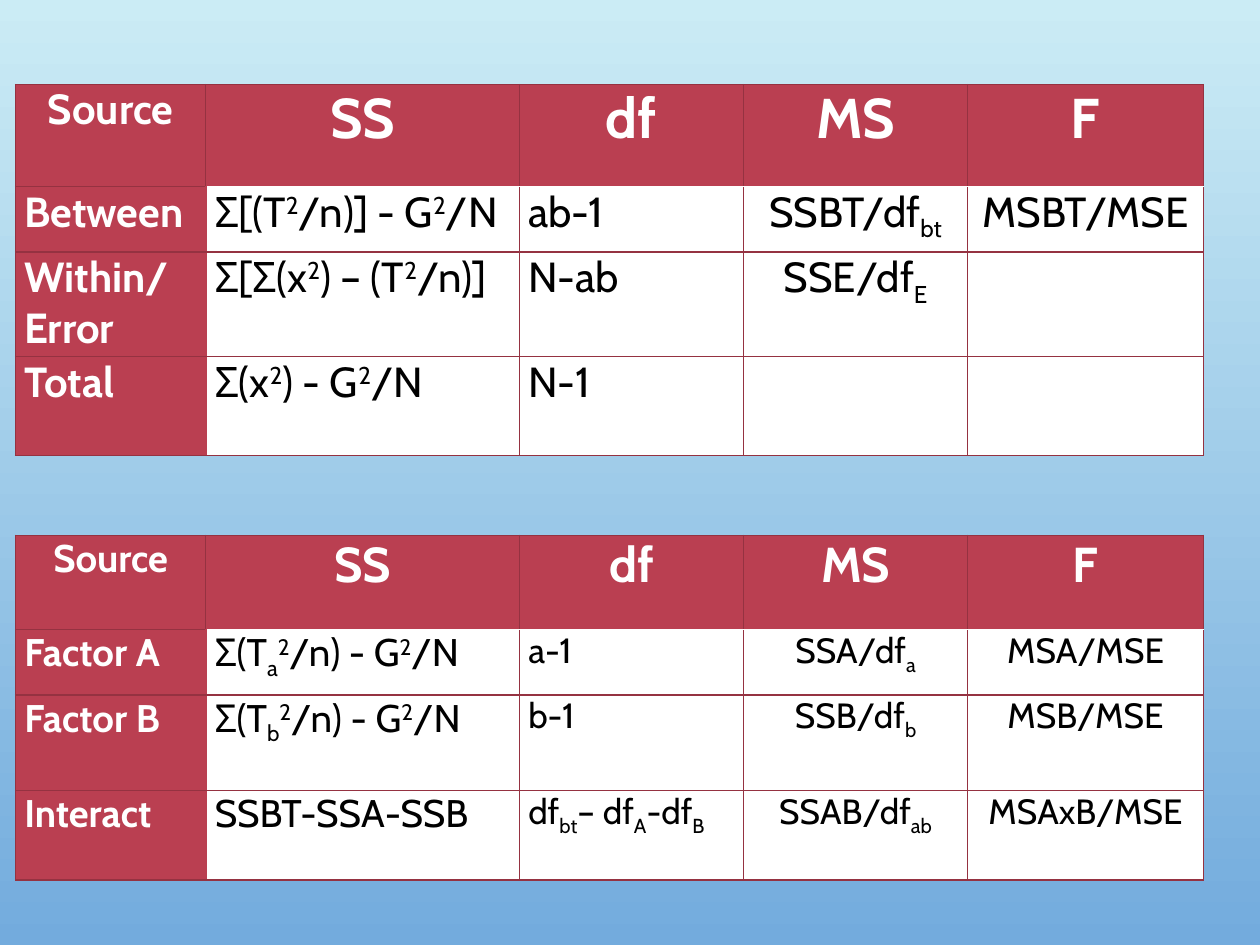
from lxml import etree
from pptx import Presentation
from pptx.dml.color import RGBColor
from pptx.enum.text import PP_ALIGN
from pptx.oxml.ns import qn
from pptx.util import Cm, Pt

CENTER, LEFT = PP_ALIGN.CENTER, PP_ALIGN.LEFT
WHITE = RGBColor(0xFF, 0xFF, 0xFF)
BLACK = RGBColor(0x00, 0x00, 0x00)
RED = RGBColor(0xBA, 0x3F, 0x51)
DARK_RED = RGBColor(0x95, 0x32, 0x41)
SKY_TOP = RGBColor(0xCB, 0xEC, 0xF5)
SKY_BOTTOM = RGBColor(0x73, 0xAB, 0xDD)

FONT = "Cabin"
COL_WIDTHS = [3.84, 6.32, 4.52, 4.52, 4.75]
BASELINES = {"^": "30000", "_": "-25000"}
HEADER = ["Source", "SS", "df", "MS", "F"]
BETWEEN_WITHIN = [
    HEADER,
    ["Between", "Σ[(T{^2}/n)] - G{^2}/N", "ab-1", "SSBT/df{_bt}", "MSBT/MSE"],
    ["Within/\nError", "Σ[Σ(x{^2}) – (T{^2}/n)]", "N-ab", "SSE/df{_E}", ""],
    ["Total", "Σ(x{^2}) - G{^2}/N", "N-1", "", ""],
]
FACTORS = [
    HEADER,
    ["Factor A", "Σ(T{_a}{^2}/n) - G{^2}/N", "a-1", "SSA/df{_a}", "MSA/MSE"],
    ["Factor B", "Σ(T{_b}{^2}/n) - G{^2}/N", "b-1", "SSB/df{_b}", "MSB/MSE"],
    ["Interact", "SSBT-SSA-SSB", "df{_bt}– df{_A}-df{_B}", "SSAB/df{_ab}", "MSAxB/MSE"],
]


def add_runs(p, text):
    """Add text to a paragraph, with {^x} raised and {_x} lowered."""
    for i, part in enumerate(text.replace("}", "{").split("{")):
        if not part:
            continue
        r = p.add_run()
        r.text = part[1:] if i % 2 else part
        if i % 2:
            r._r.get_or_add_rPr().set("baseline", BASELINES[part[0]])


def set_borders(cell, row, col):
    """Draw the four cell edges according to the cell's place in the table."""
    edges = dict.fromkeys(("lnL", "lnR", "lnT", "lnB"), (DARK_RED, 0.75))
    if col > 0 and row < 2:
        edges["lnT" if row else "lnB"] = (WHITE, 1.25)
    if row > 0 and col < 2:
        edges["lnL" if col else "lnR"] = (RED, 1.25)
    tcPr = cell._tc.get_or_add_tcPr()
    for tag, (color, width) in edges.items():
        ln = etree.SubElement(tcPr, qn(f"a:{tag}"), w=str(Pt(width)))
        fill = etree.SubElement(ln, qn("a:solidFill"))
        etree.SubElement(fill, qn("a:srgbClr"), val=str(color))


def fill_cell(cell, text, row, col, size):
    """Write and style one table cell."""
    label = row == 0 or col == 0
    set_borders(cell, row, col)
    cell.fill.solid()
    cell.fill.fore_color.rgb = RED if label else WHITE
    cell.margin_left = cell.margin_right = Cm(0.18)
    cell.margin_top = cell.margin_bottom = 0
    tf = cell.text_frame
    for i, line in enumerate(text.split("\n")):
        p = tf.add_paragraph() if i else tf.paragraphs[0]
        p.alignment = CENTER if row == 0 or col > 2 else LEFT
        p.font.name = FONT
        p.font.size = Pt(size)
        p.font.bold = label
        p.font.color.rgb = WHITE if label else BLACK
        add_runs(p, line)


def add_anova_table(slide, left, top, heights, rows, sizes):
    """Add a variance table; sizes are for headings, labels with SS, and the rest."""
    head_size, label_size, value_size = sizes
    table = slide.shapes.add_table(
        len(rows), len(COL_WIDTHS), Cm(left), Cm(top),
        Cm(sum(COL_WIDTHS)), Cm(sum(heights))).table
    table.first_col = True
    table.horz_banding = False
    for column, width in zip(table.columns, COL_WIDTHS):
        column.width = Cm(width)
    for i, (height, texts) in enumerate(zip(heights, rows)):
        table.rows[i].height = Cm(height)
        for j, text in enumerate(texts):
            if i == 0 and j > 0:
                size = head_size
            else:
                size = label_size if j < 2 else value_size
            fill_cell(table.cell(i, j), text, i, j, size)


def set_background(slide):
    """Fill the slide with a gradient that darkens downwards."""
    fill = slide.background.fill
    fill.gradient()
    fill.gradient_angle = 270
    for stop, color in zip(fill.gradient_stops, (SKY_TOP, SKY_BOTTOM)):
        stop.color.rgb = color


def main():
    """Build the slide and save it."""
    prs = Presentation()
    prs.slide_width, prs.slide_height = Cm(25.4), Cm(19.05)
    slide = prs.slides.add_slide(prs.slide_layouts[6])
    set_background(slide)
    add_anova_table(slide, 0.31, 1.7, [2.06, 1.32, 2.11, 2], BETWEEN_WITHIN, (32, 24, 24))
    add_anova_table(slide, 0.31, 10.79, [1.9, 1.32, 1.93, 1.8], FACTORS, (28, 22, 20))
    prs.save("out.pptx")


if __name__ == "__main__":
    main()
